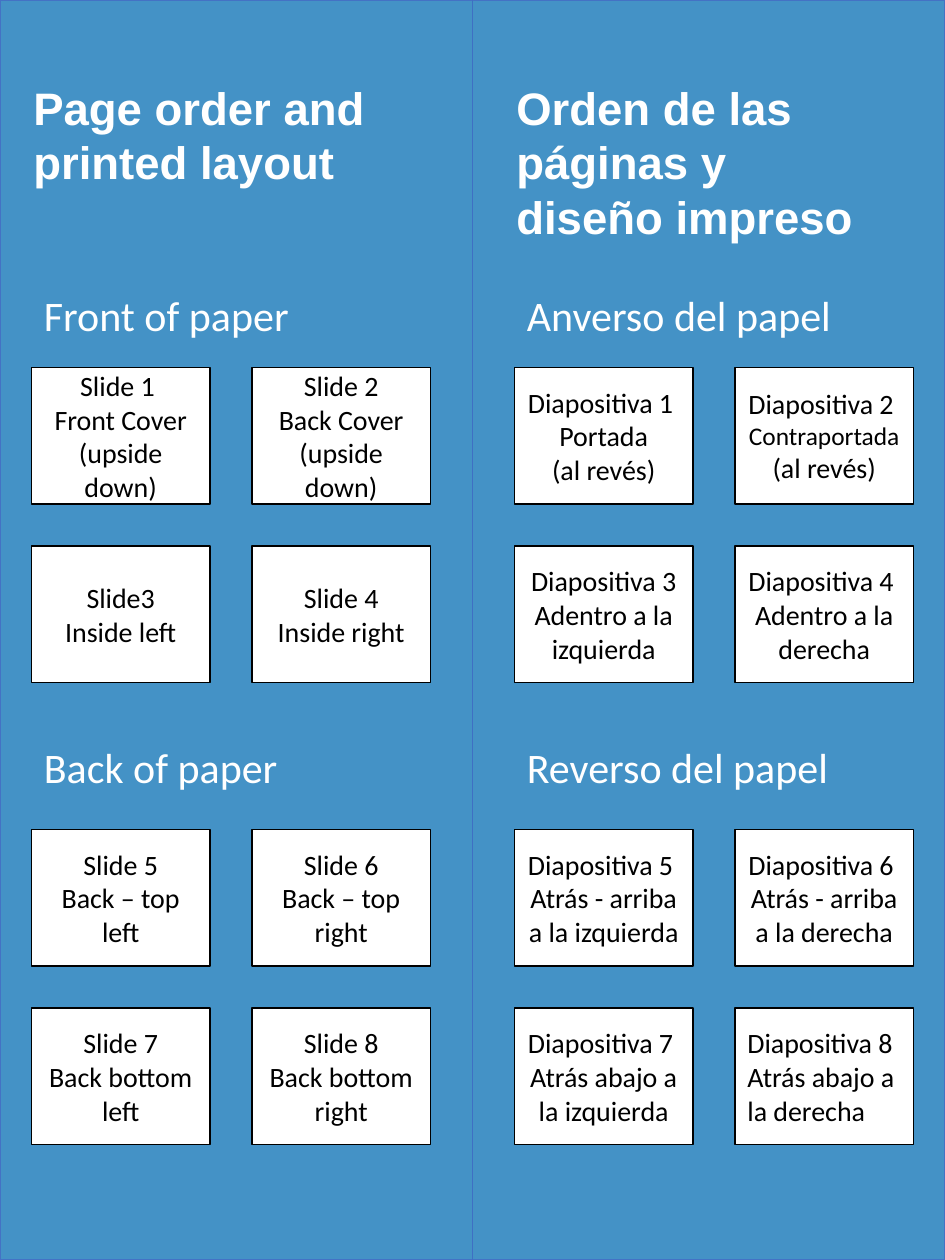
"""Build a bilingual page-order guide with two columns of page cards."""
from dataclasses import dataclass

import pptx
import pptx.dml.color
import pptx.enum.shapes
import pptx.enum.text
import pptx.oxml
import pptx.util


@dataclass(frozen=True)
class Theme:
    backdrop: str = "4492C6"
    edge: str = "4472C4"
    divider: str = "3F6FC3"
    light: str = "FFFFFF"
    dark: str = "000000"
    display: str = "Arial"
    body: str = "Calibri"
    title: float = 26
    heading: float = 24
    label: float = 16
    small: float = 14.5


THEME = Theme()
COLUMNS, ROWS = 90, 120
CARD_WIDTH, CARD_HEIGHT, CARD_STEP = 17, 13, 21
HEADING_ROWS = (27, 70)
CARD_ROWS = (35, 52, 79, 96)

PANELS = [
    {
        "title_column": 2, "column": 3,
        "title": "Page order and\nprinted layout",
        "headings": ("Front of paper", "Back of paper"),
        "cards": (
            "Slide 1 \nFront Cover\n(upside down)", "Slide 2\nBack Cover\n(upside down)",
            "Slide3\nInside left", "Slide 4\nInside right",
            "Slide 5\nBack – top left", "Slide 6\nBack – top right",
            "Slide 7\nBack bottom left", "Slide 8\nBack bottom right",
        ),
    },
    {
        "title_column": 48, "column": 49,
        "title": "Orden de las páginas y diseño impreso",
        "headings": ("Anverso del papel", "Reverso del papel"),
        "cards": (
            "Diapositiva 1 \nPortada\n(al revés)", "Diapositiva 2 \nContraportada\n(al revés)",
            "Diapositiva 3\nAdentro a la izquierda", "Diapositiva 4 \nAdentro a la derecha",
            "Diapositiva 5 \nAtrás - arriba a la izquierda",
            "Diapositiva 6 \nAtrás - arriba a la derecha",
            "Diapositiva 7 \nAtrás abajo a la izquierda",
            "Diapositiva 8\nAtrás abajo a la derecha",
        ),
    },
]
SMALL_LINES = {"Contraportada"}
LEFT_CARDS = {"Diapositiva 8\nAtrás abajo a la derecha"}


class Sheet:
    def __init__(self, deck, theme):
        self.deck, self.theme = deck, theme
        self.page = deck.slides.add_slide(deck.slide_layouts[6])

    def place(self, column, row, width, height):
        across, down = self.deck.slide_width / COLUMNS, self.deck.slide_height / ROWS
        return [round(size) for size in (column * across, row * down, width * across, height * down)]

    def color(self, value):
        return pptx.dml.color.RGBColor.from_string(value)

    def rectangle(self, area, fill, line):
        kind = pptx.enum.shapes.MSO_SHAPE.RECTANGLE
        box = self.page.shapes.add_shape(kind, *self.place(*area))
        box.shadow.inherit = False
        box.fill.solid()
        box.fill.fore_color.rgb = self.color(fill)
        box.line.color.rgb = self.color(line)
        box.line.width = pptx.util.Pt(1)
        return box

    def fill_text(self, box, text, align, color, **style):
        frame = box.text_frame
        frame.word_wrap = True
        for index, line in enumerate(text.split("\n")):
            para = frame.paragraphs[0] if index == 0 else frame.add_paragraph()
            para.alignment = align
            span = para.add_run()
            span.text = line
            span.font.color.rgb = self.color(color)
            size = self.theme.small if line in SMALL_LINES else style["size"]
            for name, value in {**style, "size": pptx.util.Pt(size)}.items():
                setattr(span.font, name, value)

    def text(self, area, text, **style):
        box = self.page.shapes.add_textbox(*self.place(*area))
        self.fill_text(box, text, pptx.enum.text.PP_ALIGN.LEFT, self.theme.light, **style)

    def card(self, column, row, text):
        box = self.rectangle((column, row, CARD_WIDTH, CARD_HEIGHT), self.theme.light, self.theme.dark)
        box.text_frame.vertical_anchor = pptx.enum.text.MSO_ANCHOR.MIDDLE
        choices = pptx.enum.text.PP_ALIGN
        align = choices.LEFT if text in LEFT_CARDS else choices.CENTER
        self.fill_text(box, text, align, self.theme.dark, name=self.theme.body, size=self.theme.label)

    def divider(self, box):
        kind = pptx.enum.shapes.MSO_CONNECTOR.STRAIGHT
        rule = self.page.shapes.add_connector(kind, 0, 0, 0, 0)
        rule.begin_connect(box, 0)
        rule.end_connect(box, 2)
        rule.line.color.rgb = self.color(self.theme.divider)
        rule.line.width = pptx.util.Pt(0.75)
        rule._element.spPr.append(pptx.oxml.parse_xml(
            '<a:effectLst xmlns:a="http://schemas.openxmlformats.org/drawingml/2006/main"/>'))

    def panel(self, content):
        theme, column = self.theme, content["column"]
        self.text((content["title_column"], 7, 37, 16), content["title"],
                  name=theme.display, size=theme.title, bold=True)
        for row, heading in zip(HEADING_ROWS, content["headings"]):
            self.text((column, row, 39, 6), heading, name=theme.body, size=theme.heading)
        for index, text in enumerate(content["cards"]):
            row, side = divmod(index, 2)
            self.card(column + side * CARD_STEP, CARD_ROWS[row], text)


def main():
    deck = pptx.Presentation()
    deck.slide_width, deck.slide_height = pptx.util.Inches(7.5), pptx.util.Inches(10)
    sheet = Sheet(deck, THEME)
    backdrop = sheet.rectangle((0, 0, COLUMNS, ROWS), THEME.backdrop, THEME.edge)
    for content in PANELS:
        sheet.panel(content)
    sheet.divider(backdrop)
    deck.save("out.pptx")


if __name__ == "__main__":
    main()
